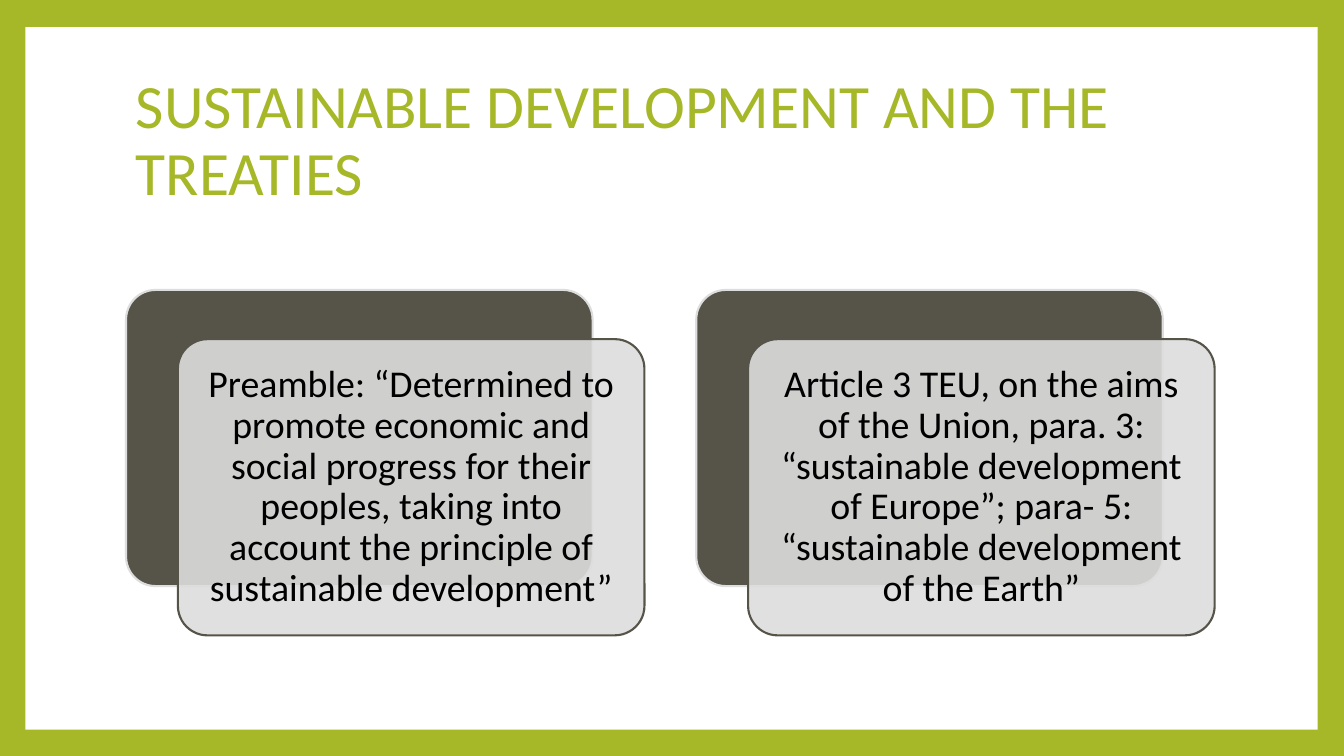
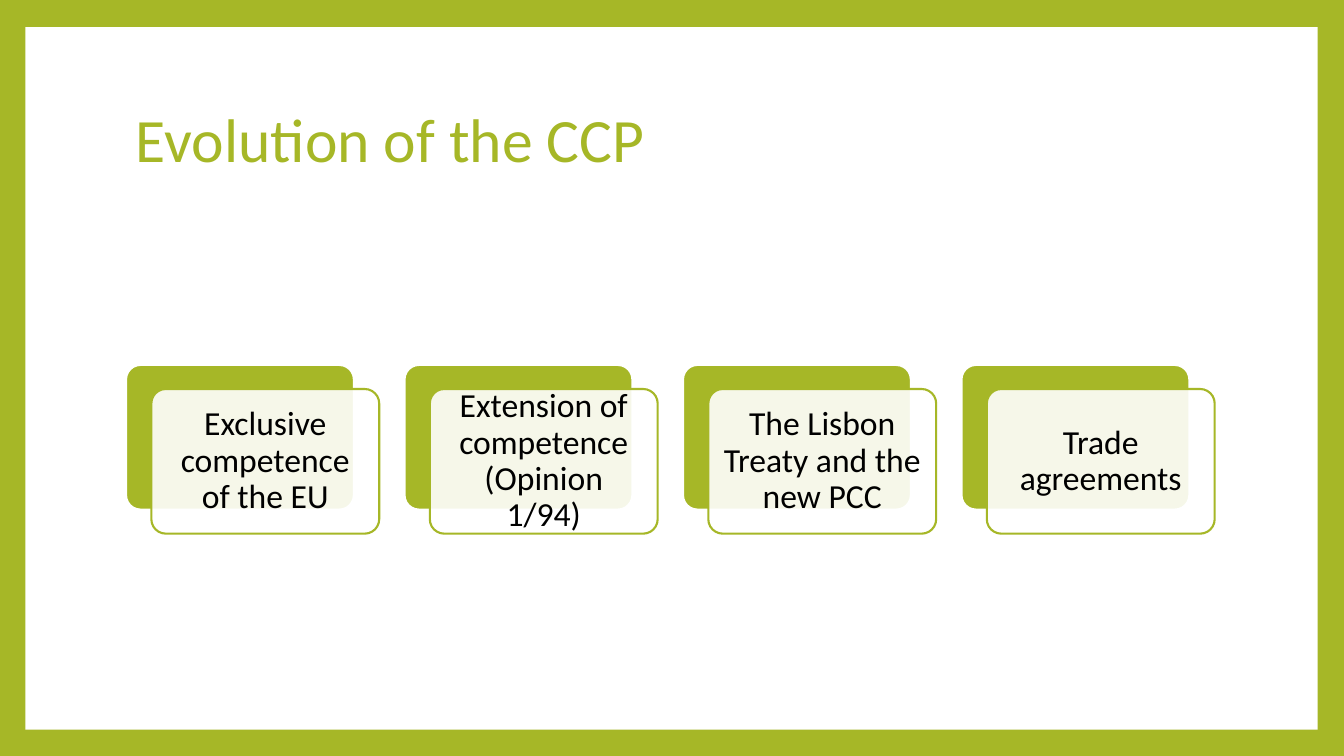
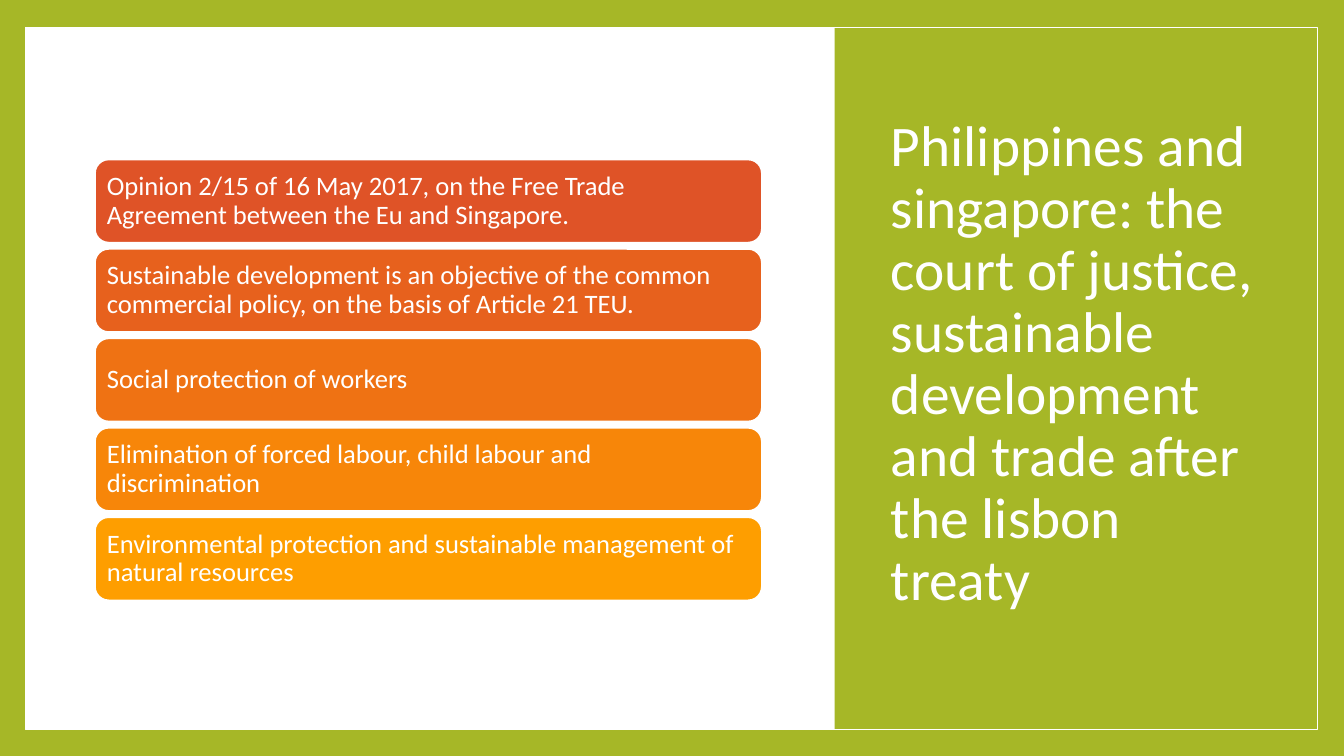
"""Build three slides on sustainable development in EU trade policy."""
from typing import Any, NamedTuple, Optional

import pptx
import pptx.dml.color
import pptx.enum.shapes
import pptx.enum.text
import pptx.util
from lxml import etree
from pptx.oxml.ns import qn

SHAPE = pptx.enum.shapes.MSO_SHAPE
ALIGN = pptx.enum.text.PP_ALIGN
ANCHOR = pptx.enum.text.MSO_ANCHOR

FONT = "Calibri"
GREEN, WHITE, BLACK = "A6B727", "FFFFFF", "000000"
OLIVE, SILVER = "565349", "DDDDDD"
WIDTH, HEIGHT = pptx.util.Inches(13.33), pptx.util.Inches(7.5)


class Box(NamedTuple):
    """A place in percent of the slide's width and height."""
    left: float
    top: float
    width: float
    height: float

    def emu(self) -> tuple[int, int, int, int]:
        return (round(WIDTH * self.left / 100), round(HEIGHT * self.top / 100),
                round(WIDTH * self.width / 100), round(HEIGHT * self.height / 100))


class Look(NamedTuple):
    """Fill, outline and corner of a shape."""
    fill: Optional[str] = None
    line: Optional[str] = None
    weight: float = 1.5
    corner: Optional[float] = None
    opacity: int = 100


class Wording(NamedTuple):
    """A text with its format."""
    text: str
    size: float
    colour: str
    align: Any = ALIGN.LEFT
    inset: Optional[float] = None


class CardRow(NamedTuple):
    """A titled row of layered cards."""
    title: str
    cards: tuple[str, ...]
    middle: float
    size: float
    inset: float
    back: Look
    front: Look


class Bar(NamedTuple):
    """One coloured bar of a stacked list."""
    colour: str
    text: str


PANEL = Box(1.88, 3.6, 96.15, 92.93)
TITLE = Box(9.38, 8.93, 81, 19.73)
SIDE = Box(62.1, 0, 37.9, 100)
SIDE_TITLE = Box(65.55, 8.93, 29.33, 78.8)
FIRST_BAR = Box(7.05, 21.07, 49.65, 11.05)
BAR_PITCH = 11.83
CARD_SHIFT, CARD_DROP, CARD_RATIO = 1 / 9, 0.95 / 9, 0.635

CARD_ROWS = (
    CardRow("SUSTAINABLE DEVELOPMENT AND THE TREATIES", (
        "Preamble: “Determined to promote economic and social progress for their "
        "peoples, taking into account the principle of sustainable development”",
        "Article 3 TEU, on the aims of the Union, para. 3: “sustainable development "
        "of Europe”; para- 5: “sustainable development of the Earth”",
    ), 61.2, 27, 0.11, Look(OLIVE, SILVER, corner=0.1),
        Look(SILVER, OLIVE, corner=0.1, opacity=90)),
    CardRow("Evolution of the CCP", (
        "Exclusive competence of the EU",
        "Extension of competence (Opinion 1/94)",
        "The Lisbon Treaty and the new PCC",
        "Trade agreements",
    ), 59.43, 24, 0.1, Look(GREEN, WHITE, corner=0.1),
        Look(WHITE, GREEN, corner=0.1, opacity=90)),
)

COURT_TITLE = ("Philippines and singapore: the court of justice, sustainable "
               "development and trade after the lisbon treaty")
COURT_BARS = (
    Bar("DF5327", "Opinion 2/15 of 16 May 2017, on the Free Trade Agreement "
                  "between the Eu and Singapore."),
    Bar("E7611D", "Sustainable development is an objective of the common commercial "
                  "policy, on the basis of Article 21 TEU."),
    Bar("EF7213", "Social protection of workers"),
    Bar("F78609", "Elimination of forced labour, child labour and discrimination"),
    Bar("FE9E00", "Environmental protection and sustainable management of natural "
                  "resources"),
)


def paint(colour_holder: Any, colour: str) -> None:
    """Give a fill a solid colour."""
    colour_holder.solid()
    colour_holder.fore_color.rgb = pptx.dml.color.RGBColor.from_string(colour)


def apply(target: Any, values: dict[str, Any]) -> None:
    """Set each named attribute on the target."""
    for name, value in values.items():
        setattr(target, name, value)


def write(shape: Any, wording: Wording) -> None:
    """Put formatted text into a shape."""
    frame = shape.text_frame
    apply(frame, {"word_wrap": True, "vertical_anchor": ANCHOR.MIDDLE})
    if wording.inset is not None:
        sides = ("left", "right", "top", "bottom")
        apply(frame, {f"margin_{side}": pptx.util.Inches(wording.inset) for side in sides})
    paragraph = frame.paragraphs[0]
    apply(paragraph, {"text": wording.text, "alignment": wording.align, "line_spacing": 0.9})
    font = paragraph.runs[0].font
    apply(font, {"name": FONT, "size": pptx.util.Pt(wording.size)})
    paint(font.fill, wording.colour)


def draw(slide: Any, box: Box, look: Look, wording: Optional[Wording] = None,
         kind: Any = SHAPE.RECTANGLE) -> None:
    """Draw a shape with its look and optional text."""
    shape = slide.shapes.add_shape(kind, *box.emu())
    shape.shadow.inherit = False
    if look.corner is not None:
        shape.adjustments[0] = look.corner
    if look.fill:
        paint(shape.fill, look.fill)
    else:
        shape.fill.background()
    if look.opacity < 100:
        tint = shape.fill._xPr.find(qn("a:solidFill"))[0]
        etree.SubElement(tint, qn("a:alpha")).set("val", str(look.opacity * 1000))
    if look.line:
        paint(shape.line.fill, look.line)
        shape.line.width = pptx.util.Pt(look.weight)
    else:
        shape.line.fill.background()
    if wording:
        write(shape, wording)


def framed_slide(deck: Any) -> Any:
    """Add a slide with the green border and white panel."""
    slide = deck.slides.add_slide(deck.slide_layouts[6])
    paint(slide.background.fill, GREEN)
    draw(slide, PANEL, Look(WHITE))
    return slide


def add_title(slide: Any, box: Box, wording: Wording) -> None:
    """Write the slide's title."""
    write(slide.shapes.add_textbox(*box.emu()), wording)


def card_slide(deck: Any, row: CardRow) -> None:
    """Build a slide with a row of layered cards."""
    slide = framed_slide(deck)
    add_title(slide, TITLE, Wording(row.title, 44, GREEN))
    pitch_share = 1 + 2 * CARD_SHIFT
    width = TITLE.width / (len(row.cards) * pitch_share - CARD_SHIFT)
    unit = width * WIDTH / HEIGHT
    height, drop = unit * CARD_RATIO, unit * CARD_DROP
    top = row.middle - (height + drop) / 2
    for index, text in enumerate(row.cards):
        left = TITLE.left + index * width * pitch_share
        draw(slide, Box(left, top, width, height), row.back, kind=SHAPE.ROUNDED_RECTANGLE)
        draw(slide, Box(left + width * CARD_SHIFT, top + drop, width, height), row.front,
             Wording(text, row.size, BLACK, ALIGN.CENTER, row.inset),
             SHAPE.ROUNDED_RECTANGLE)


def court_slide(deck: Any) -> None:
    """Build the slide with the side title and stacked bars."""
    slide = framed_slide(deck)
    draw(slide, SIDE, Look(GREEN))
    add_title(slide, SIDE_TITLE, Wording(COURT_TITLE, 41, WHITE))
    draw(slide, PANEL, Look(line=WHITE, weight=1))
    for index, bar in enumerate(COURT_BARS):
        place = FIRST_BAR._replace(top=FIRST_BAR.top + index * BAR_PITCH)
        draw(slide, place, Look(bar.colour, WHITE),
             Wording(bar.text, 19, WHITE, inset=0.08), SHAPE.ROUNDED_RECTANGLE)


def main() -> None:
    """Build and save the deck."""
    deck = pptx.Presentation()
    apply(deck, {"slide_width": WIDTH, "slide_height": HEIGHT})
    for row in CARD_ROWS:
        card_slide(deck, row)
    court_slide(deck)
    deck.save("out.pptx")


if __name__ == "__main__":
    main()
